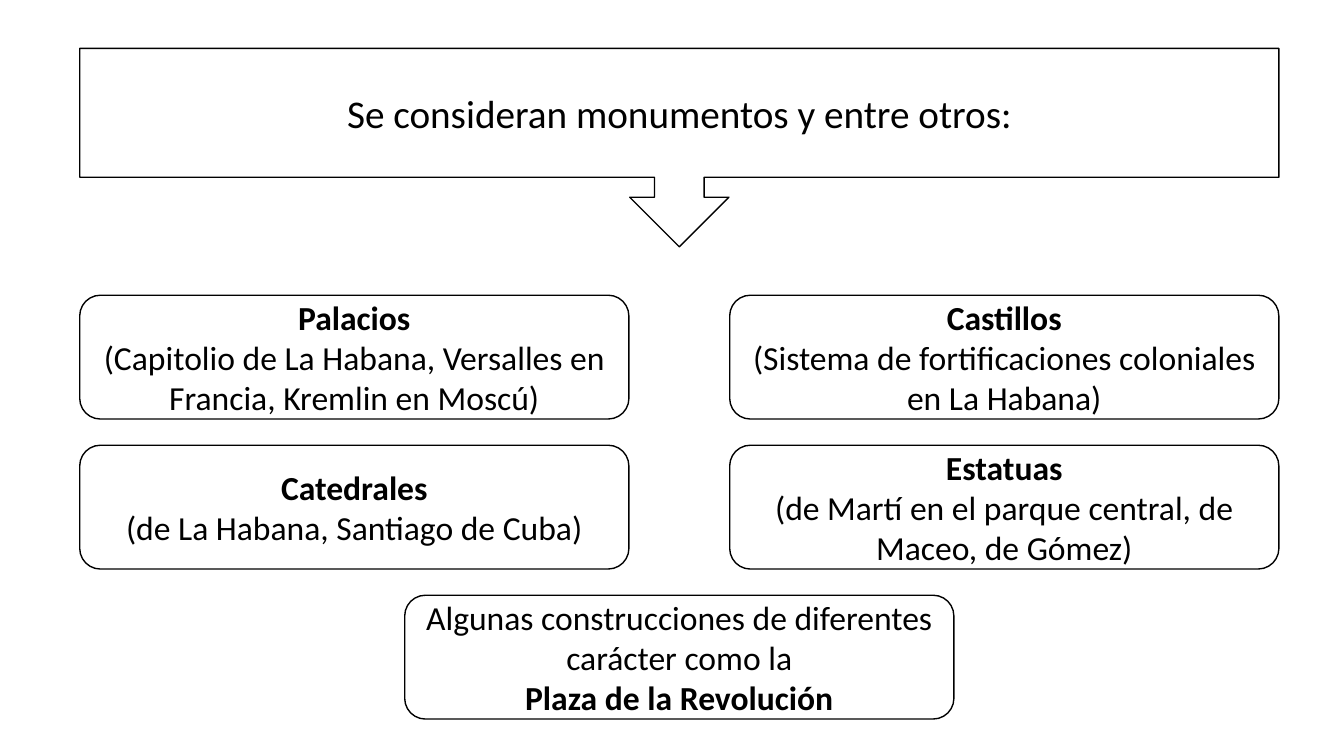
from pptx import Presentation
from pptx import util as u
from pptx.dml.color import RGBColor
from pptx.enum import shapes, text

BLACK = RGBColor(0, 0, 0)
WHITE = RGBColor(255, 255, 255)

LEFT, TOP = 2.01, 7.44
BOX_W, BOX_H = 13.84, 3.12
COL_STEP, ROW_STEP = 16.38, 3.78

BOXES = [
    (0, 0, [("Palacios", True),
            ("(Capitolio de La Habana, Versalles en Francia, Kremlin en Moscú)", False)]),
    (1, 0, [("Castillos", True),
            ("(Sistema de fortificaciones coloniales en La Habana)", False)]),
    (0, 1, [("Catedrales", True),
            ("(de La Habana, Santiago de Cuba)", False)]),
    (1, 1, [("Estatuas", True),
            ("(de Martí en el parque central, de Maceo, de Gómez)", False)]),
    (0.5, 2, [("Algunas construcciones de diferentes carácter como la", False),
              ("Plaza de la Revolución", True)]),
]


class Diagram:
    font = {"name": "Calibri"}
    frame = {"word_wrap": True, "vertical_anchor": text.MSO_ANCHOR.MIDDLE}

    def __init__(self, slide):
        self.s = slide

    def shape(self, kind, x, y, w, h, lines, size):
        sp = self.s.shapes.add_shape(kind, u.Cm(x), u.Cm(y), u.Cm(w), u.Cm(h))
        sp.shadow.inherit = False
        sp.fill.solid()
        sp.fill.fore_color.rgb = WHITE
        sp.line.color.rgb = BLACK
        sp.line.width = u.Pt(1)
        tf = sp.text_frame
        for key, value in self.frame.items():
            setattr(tf, key, value)
        for i, (words, bold) in enumerate(lines):
            p = tf.add_paragraph() if i else tf.paragraphs[0]
            p.alignment = text.PP_ALIGN.CENTER
            r = p.add_run()
            r.text = words
            for key, value in {**self.font, "size": u.Pt(size), "bold": bold}.items():
                setattr(r.font, key, value)
            r.font.color.rgb = BLACK

    def heading(self, words):
        self.shape(shapes.MSO_SHAPE.DOWN_ARROW_CALLOUT, LEFT, 1.22,
                   COL_STEP + BOX_W, 5, [(words, False)], 28)

    def box(self, col, row, lines):
        self.shape(shapes.MSO_SHAPE.ROUNDED_RECTANGLE, LEFT + col * COL_STEP,
                   TOP + row * ROW_STEP, BOX_W, BOX_H, lines, 24)


def main():
    prs = Presentation()
    prs.slide_width, prs.slide_height = u.Cm(33.87), u.Cm(19.05)
    diagram = Diagram(prs.slides.add_slide(prs.slide_layouts[6]))
    diagram.heading("Se consideran monumentos y entre otros:")
    for col, row, lines in BOXES:
        diagram.box(col, row, lines)
    prs.save("out.pptx")


if __name__ == "__main__":
    main()
